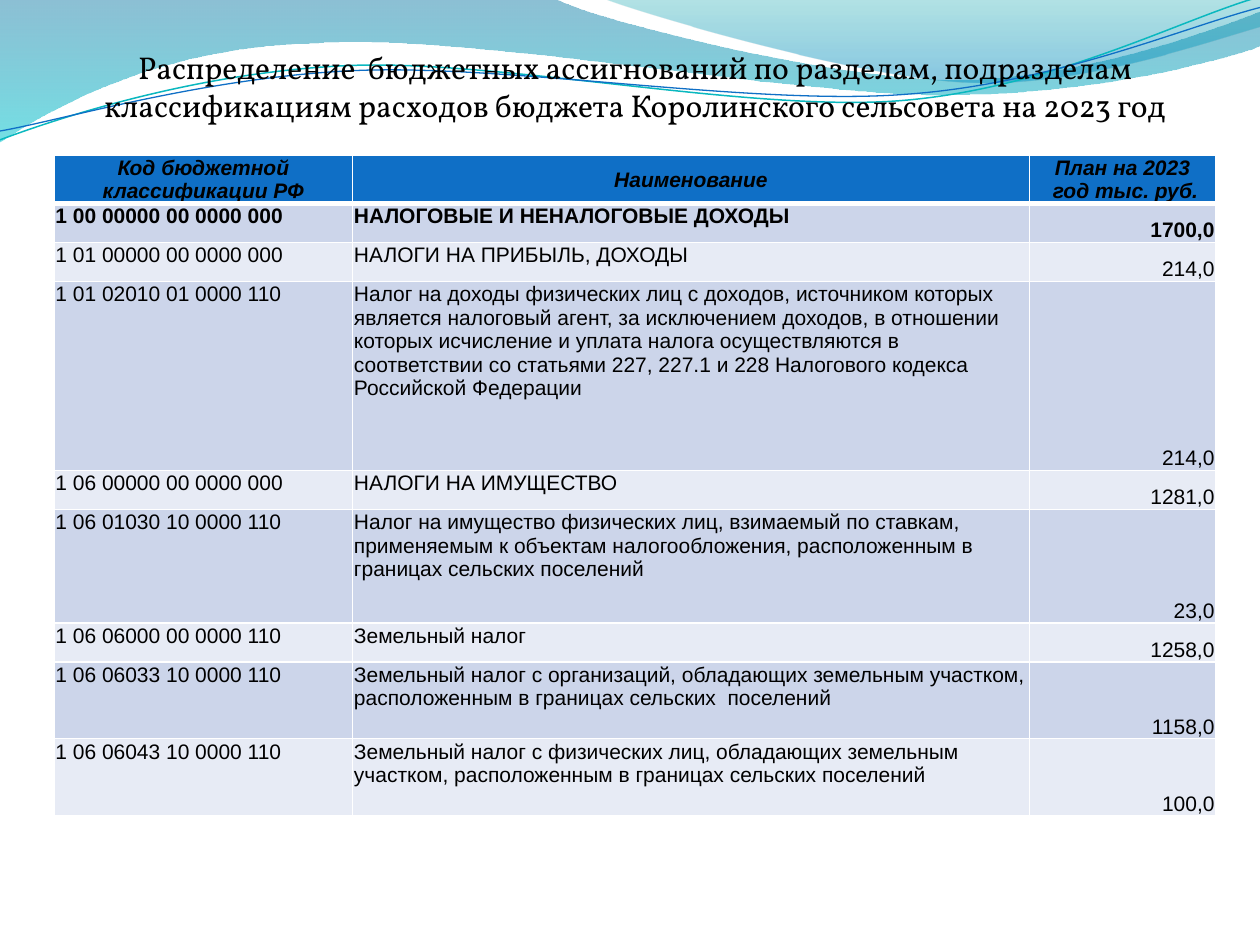
from math import cos, radians, sin
from lxml.etree import SubElement
from pptx import Presentation
from pptx.dml.color import RGBColor
from pptx.enum.text import MSO_ANCHOR as Anchor, MSO_AUTO_SIZE as Fit, PP_ALIGN as Align
from pptx.oxml.ns import qn
from pptx.util import Inches, Pt

BLACK = RGBColor(0x00, 0x00, 0x00)
WHITE = RGBColor(0xFF, 0xFF, 0xFF)
BLUE = RGBColor(0x0F, 0x6F, 0xC6)
TEAL = RGBColor(0x0A, 0xB8, 0xBF)
BANDS = RGBColor(0xCC, 0xD5, 0xEA), RGBColor(0xE7, 0xEB, 0xF5)
DEEP = RGBColor(0x00, 0x74, 0xA1)
AQUA = RGBColor(0x00, 0xC6, 0xCF)
SEA = RGBColor(0x00, 0xA1, 0xA9)
SKY = RGBColor(0x00, 0x8B, 0xBF)
TILT = 357.3

# Points with two values are corners, those with six are Bezier curves.
WAVES = [
    ([(0, 0), (4.4, -0.01), (4.76, 0.17, 6.64, 0.63, 7.58, 0.63),
      (8.53, 0.63, 9.58, 0.26, 10, 0.09), (10.01, 0.36),
      (9.83, 0.44, 8.7, 0.76, 7.46, 0.75), (6.22, 0.75, 3.82, 0.28, 2.57, 0.34),
      (1.29, 0.36, 0.46, 0.83, -0.01, 1.13)],
     [(0, DEEP, 45), (1, AQUA, 55)]),
    ([(4.79, -0.01), (5.09, 0.11, 6.82, 0.62, 7.69, 0.65),
      (8.56, 0.69, 9.61, 0.32, 10, 0.21), (10, 0)],
     [(0, SEA, 30), (0.8, SKY, 45)]),
]
STRANDS = [
    ([(0, 1.11), (0.48, 0.93, 1.58, 0.57, 2.77, 0.52),
      (3.95, 0.47, 5.93, 0.89, 7.13, 0.8), (8.33, 0.71, 9.38, 0.15, 9.98, -0.02)],
     (4.99, 0.58), TEAL, 0.85),
    ([(0, 1.04), (0.47, 0.96, 1.64, 0.61, 2.83, 0.56),
      (4.03, 0.51, 5.97, 0.84, 7.17, 0.75), (8.36, 0.67, 9.41, 0.21, 10, 0.06)],
     (5, 0.59), BLUE, 0.75),
]

TITLE = ("Распределение  бюджетных ассигнований по разделам, подразделам "
         "классификациям расходов бюджета Королинского сельсовета на 2023 год")
COLS = [2.37, 5.37, 1.48]
ROWS = [
    (0.38, "Код бюджетной классификации РФ", "Наименование",
     "План на 2023\n год тыс. руб."),
    (0.31, "1 00 00000 00 0000 000", "НАЛОГОВЫЕ И НЕНАЛОГОВЫЕ ДОХОДЫ", "1700,0"),
    (0.31, "1 01 00000 00 0000 000", "НАЛОГИ НА ПРИБЫЛЬ, ДОХОДЫ", "214,0"),
    (1.5, "1 01 02010 01 0000 110",
     "Налог на доходы физических лиц с доходов, источником которых является "
     "налоговый агент, за исключением доходов, в отношении которых исчисление "
     "и уплата налога осуществляются в соответствии со статьями 227, 227.1 "
     "и 228 Налогового кодекса Российской Федерации", "214,0"),
    (0.31, "1 06 00000 00 0000 000", "НАЛОГИ НА ИМУЩЕСТВО", "1281,0"),
    (0.9, "1 06 01030 10 0000 110",
     "Налог на имущество физических лиц, взимаемый по ставкам, применяемым "
     "к объектам налогообложения, расположенным в границах сельских поселений",
     "23,0"),
    (0.31, "1 06 06000 00 0000 110", "Земельный налог", "1258,0"),
    (0.61, "1 06 06033 10 0000 110",
     "Земельный налог с организаций, обладающих земельным участком, "
     "расположенным в границах сельских  поселений", "1158,0"),
    (0.61, "1 06 06043 10 0000 110",
     "Земельный налог с физических лиц, обладающих земельным участком, "
     "расположенным в границах сельских поселений", "100,0"),
]


def turn(path, mid, angle):
    """Rotate every point of a path about mid."""
    c, s = cos(radians(angle)), sin(radians(angle))
    out = []
    for seg in path:
        flat = []
        for x, y in zip(seg[::2], seg[1::2]):
            dx, dy = x - mid[0], y - mid[1]
            flat += [mid[0] + c * dx - s * dy, mid[1] + s * dx + c * dy]
        out.append(tuple(flat))
    return out


def add_path(shapes, path, left, top, close):
    pts = [(left + Inches(x), top + Inches(y))
           for seg in path for x, y in zip(seg[::2], seg[1::2])]
    pen = shapes.build_freeform(*pts[0])
    pen.add_line_segments(pts[1:], close=close)
    shape = pen.convert_to_shape()
    shape.shadow.inherit = False
    lines = iter(list(shape._element.iter(qn("a:lnTo"))))
    for seg in path[1:]:
        line = next(lines)
        if len(seg) == 6:  # merge three lines into one curve
            curve = line.makeelement(qn("a:cubicBezTo"))
            line.addprevious(curve)
            for part in (line, next(lines), next(lines)):
                curve.append(part[0])
                part.getparent().remove(part)
    return shape


def add_waves(slide, left, top):
    for path, stops in WAVES:
        wave = add_path(slide.shapes, path, left, top, True)
        wave.line.fill.background()
        wave.fill.gradient()
        wave.fill.gradient_angle = 270
        for stop, (pos, color, _) in zip(wave.fill.gradient_stops, stops):
            stop.position = pos
            stop.color.rgb = color
        tags = wave._element.spPr.iter(qn("a:srgbClr"))
        for tag, (_, _, alpha) in zip(tags, stops):
            SubElement(tag, qn("a:alpha"), val=str(alpha * 1000))
    group = slide.shapes.add_group_shape()
    for path, mid, color, width in STRANDS:
        flat = turn(path, mid, -TILT)
        strand = add_path(group.shapes, flat, left, top, False)
        strand.rotation = TILT
        strand.fill.background()
        strand.line.color.rgb = color
        strand.line.width = Pt(width)


def style_text(frame, align, font, size, bold=False, italic=False):
    for para in frame.paragraphs:
        para.alignment = align
        for run in para.runs:
            run.font.name = font
            run.font.size = Pt(size)
            run.font.bold = bold
            run.font.italic = italic
            run.font.color.rgb = BLACK


def add_borders(cell, widths):
    props = cell._tc.get_or_add_tcPr()
    for side, width in widths.items():
        line = SubElement(props, qn("a:ln" + side), w=str(Pt(width)))
        fill = SubElement(line, qn("a:solidFill"))
        SubElement(fill, qn("a:srgbClr"), val=str(WHITE))


def add_budget(slide, left, top, width, height):
    table = slide.shapes.add_table(len(ROWS), len(COLS), left, top,
                                   width, height).table
    for col, size in zip(table.columns, COLS):
        col.width = Inches(size)
    for r, (tall, *texts) in enumerate(ROWS):
        table.rows[r].height = Inches(tall)
        head = r == 0
        for c, text in enumerate(texts):
            cell = table.cell(r, c)
            cell.margin_left = cell.margin_right = cell.margin_top = Inches(0.01)
            cell.margin_bottom = 0
            cell.text_frame.text = text
            last = c == len(COLS) - 1
            if head:
                align = Align.CENTER
                cell.vertical_anchor = Anchor.MIDDLE if c else Anchor.TOP
                add_borders(cell, {"L": 1, "R": 1, "T": 1, "B": 3})
            else:
                align = Align.RIGHT if last else Align.LEFT
                cell.vertical_anchor = Anchor.BOTTOM if last else Anchor.TOP
            style_text(cell.text_frame, align, "Arial", 12, r < 2, head)
            cell.fill.solid()
            cell.fill.fore_color.rgb = BLUE if head else BANDS[(r - 1) % 2]


def set_title(slide, left, top, width, height):
    title = slide.shapes.title
    title.left, title.top, title.width, title.height = left, top, width, height
    frame = title.text_frame
    frame.text = TITLE
    frame.word_wrap = True
    frame.auto_size = Fit.SHAPE_TO_FIT_TEXT
    frame.vertical_anchor = Anchor.TOP
    style_text(frame, Align.CENTER, "Vollkorn", 18)
    slide.shapes._spTree.append(title._element)  # bring to front


def main():
    deck = Presentation()
    deck.slide_width, deck.slide_height = Inches(10), Inches(7.5)
    slide = deck.slides.add_slide(deck.slide_layouts[5])
    add_waves(slide, 0, 0)
    add_budget(slide, Inches(0.43), Inches(1.23), Inches(9.22), Inches(5.24))
    set_title(slide, Inches(0.59), Inches(0.33), Inches(8.9), Inches(0.71))
    deck.save("out.pptx")


if __name__ == "__main__":
    main()
